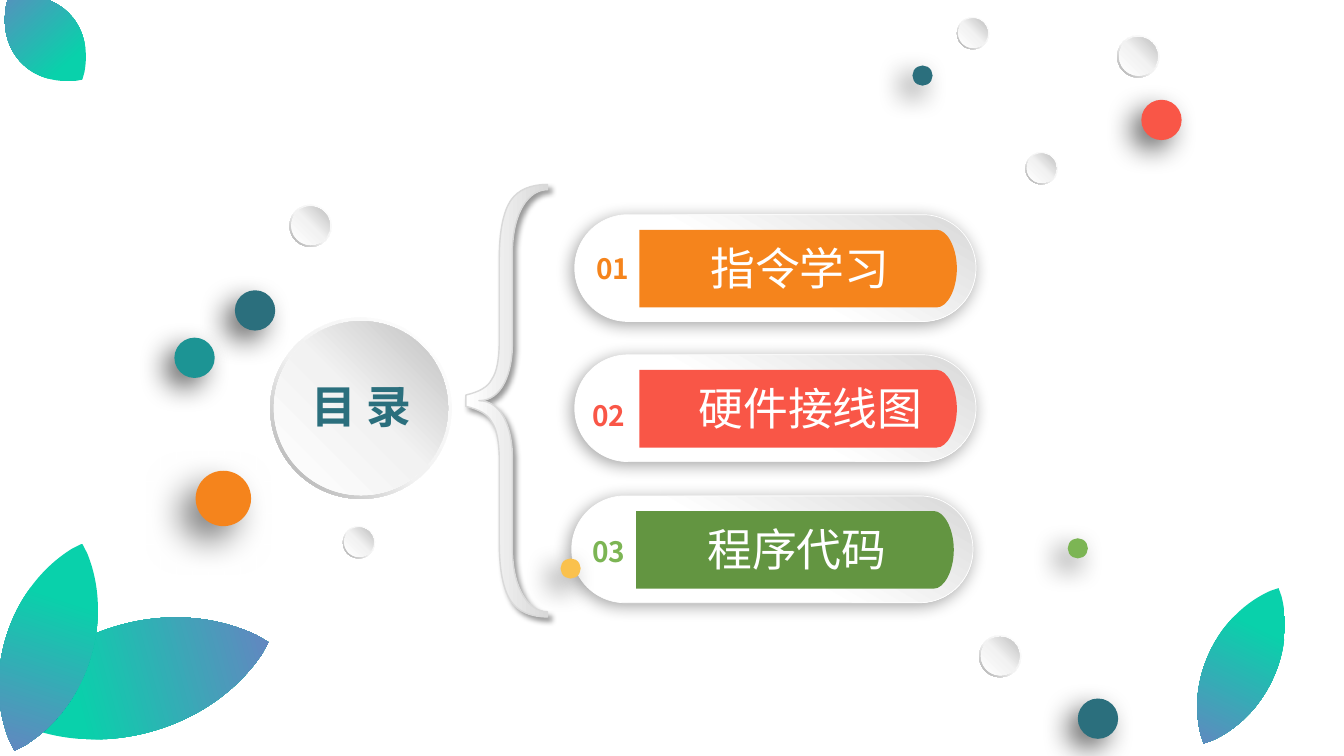
from lxml import etree
from pptx import Presentation
from pptx.dml.color import RGBColor
from pptx.enum.shapes import MSO_SHAPE
from pptx.enum.text import MSO_ANCHOR, PP_ALIGN
from pptx.oxml.ns import qn
from pptx.util import Inches, Pt

ELLIPSE, DONUT = MSO_SHAPE.OVAL, MSO_SHAPE.DONUT
PILL = MSO_SHAPE.ROUNDED_RECTANGLE
CENTER, TOP = PP_ALIGN.CENTER, MSO_ANCHOR.TOP
FONT = "Noto Sans CJK SC"

WHITE = RGBColor(0xFF, 0xFF, 0xFF)
PALE = RGBColor(0xF2, 0xF2, 0xF2)
LIGHT = RGBColor(0xD9, 0xD9, 0xD9)
SILVER = RGBColor(0xBF, 0xBF, 0xBF)
GREY = RGBColor(0xA6, 0xA6, 0xA6)
NAVY = RGBColor(0x2B, 0x6F, 0x7D)
TEAL = RGBColor(0x1C, 0x94, 0x94)
ORANGE = RGBColor(0xF5, 0x84, 0x1C)
RED = RGBColor(0xF9, 0x56, 0x47)
GREEN = RGBColor(0x63, 0x95, 0x41)
LIME = RGBColor(0x7C, 0xB5, 0x54)
YELLOW = RGBColor(0xFA, 0xC1, 0x4D)
MINT = RGBColor(0x09, 0xD1, 0xAB)
VIOLET = RGBColor(0x6E, 0x7D, 0xC3)

RING_FILL = ([(0, WHITE), (55, PALE), (100, GREY)], 135)
DISC_FILL = ([(0, WHITE), (51, PALE), (100, SILVER)], 315)
PILL_FILL = ([(45, WHITE), (100, LIGHT)], 300)
BRACE_FILL = ([(0, WHITE), (100, LIGHT)], 0)
LEAF_FILL = ([(0, MINT), (31, MINT), (100, VIOLET)], 90)


def add_color(parent, color, alpha=100):
    clr = etree.SubElement(parent, qn("a:srgbClr"), val=str(color))
    if alpha < 100:
        etree.SubElement(clr, qn("a:alpha"), val=str(alpha * 1000))


def style(sp, fill, line=None, shadow=None):
    """fill: colour or (stops, angle); line: (colour, pt); shadow: (alpha, blur, dist, angle)."""
    sp.shadow.inherit = False
    if isinstance(fill, RGBColor):
        sp.fill.solid()
        sp.fill.fore_color.rgb = fill
    else:
        stops, angle = fill
        sp.fill.gradient()
        grad = sp._element.spPr.find(qn("a:gradFill"))
        for child in list(grad):
            grad.remove(child)
        grad.set("rotWithShape", "1")
        gs_list = etree.SubElement(grad, qn("a:gsLst"))
        for pos, color in stops:
            add_color(etree.SubElement(gs_list, qn("a:gs"), pos=str(pos * 1000)), color)
        etree.SubElement(grad, qn("a:lin"), ang=str(angle * 60000), scaled="0")
    if line:
        sp.line.color.rgb, sp.line.width = line[0], Pt(line[1])
    else:
        sp.line.fill.background()
    if shadow:
        alpha, blur, dist, angle = shadow
        effects = sp._element.spPr.find(qn("a:effectLst"))
        outer = etree.SubElement(effects, qn("a:outerShdw"), blurRad=str(Pt(blur)),
                                 dist=str(Pt(dist)), dir=str(angle * 60000),
                                 algn="ctr", rotWithShape="0")
        add_color(outer, RGBColor(0, 0, 0), alpha)


def add_preset(parent, kind, x, y, w, h, fill, adj=None, line=None, shadow=None):
    sp = parent.shapes.add_shape(kind, Inches(x), Inches(y), Inches(w), Inches(h))
    if adj is not None:
        sp.adjustments[0] = adj
    style(sp, fill, line, shadow)


def mirrored(start, steps, flip):
    """Steps that lead back from the end to the flipped start."""
    pts = [flip(pt) for pt in [start] + sum(steps, [])][-2::-1]
    back = []
    for step in reversed(steps):
        back.append(pts[:len(step)])
        pts = pts[len(step):]
    return back


def add_outline(parent, x, y, w, h, start, steps, fill, line=None, shadow=None):
    """Steps hold shares of the box: one point is a line, three are a cubic curve."""
    pts = [(Inches(x + px * w), Inches(y + py * h)) for px, py in [start] + sum(steps, [])]
    builder = parent.shapes.build_freeform(*pts[0])
    builder.add_line_segments(pts[1:], close=True)
    sp = builder.convert_to_shape()
    segments = iter(list(sp._element.iter(qn("a:lnTo"))))
    for step in steps:
        parts = [next(segments) for _ in step]
        if len(parts) == 3:
            curve = etree.Element(qn("a:cubicBezTo"))
            parts[0].addprevious(curve)
            for part in parts:
                curve.append(part[0])
                part.getparent().remove(part)
    style(sp, fill, line, shadow)
    return sp


def add_text(parent, x, y, w, h, text, size, color, bold=False, wrap=True, inset=True):
    box = parent.shapes.add_textbox(Inches(x), Inches(y), Inches(w), Inches(h))
    tf = box.text_frame
    tf.word_wrap, tf.vertical_anchor = wrap, TOP
    if not inset:
        tf.margin_left = tf.margin_right = tf.margin_top = tf.margin_bottom = 0
    p = tf.paragraphs[0]
    p.alignment = CENTER
    r = p.add_run()
    r.text = text
    r.font.size, r.font.bold, r.font.name = Pt(size), bold, FONT
    r.font.color.rgb = color
    etree.SubElement(r.font._element, qn("a:ea"), typeface=FONT)


def knob(slide, x, y, d, inset=0.045):
    group = slide.shapes.add_group_shape()
    add_preset(group, DONUT, x, y, d, d, RING_FILL, 0.049)
    gap, disc = d * inset, d * (1 - 2 * inset)
    add_preset(group, ELLIPSE, x + gap, y + gap, disc, disc, DISC_FILL)
    return group


def title_knob(slide, x, y, d):
    group = knob(slide, x, y, d, 0.02)
    add_text(group, x + 0.12, y + 0.61, d - 0.23, 0.54, "目 录", 32, NAVY, True, inset=False)


def brace(slide, x, y, w, h):
    # Upper half: outer edge up, then inner edge back down to the middle
    start = (0, 0.487)
    half = [[(0.16, 0.48), (0.27, 0.469), (0.32, 0.45)],
            [(0.38, 0.434), (0.41, 0.403), (0.41, 0.361)],
            [(0.41, 0.172)],
            [(0.41, 0.107), (0.46, 0.063), (0.55, 0.037)],
            [(0.64, 0.012), (0.8, 0), (1, 0)],
            [(1, 0.012)],
            [(0.78, 0.012), (0.58, 0.06), (0.57, 0.154)],
            [(0.57, 0.371)],
            [(0.57, 0.429), (0.46, 0.5), (0.16, 0.5)]]
    lower = mirrored(start, half, lambda pt: (pt[0], 1 - pt[1]))
    add_outline(slide, x, y, w, h, start, half + lower, BRACE_FILL, (LIGHT, 1), (40, 4, 3, 45))


def entry(slide, x, y, number, title, color, number_color, number_at, title_x, title_w):
    group = slide.shapes.add_group_shape()
    add_preset(group, PILL, x, y, 3.98, 1.06, PILL_FILL, 0.5, (WHITE, 0.5), (34, 12, 3, 135))
    label = [[(0.937, 0)],
             [(0.97, 0), (1, 0.23), (1, 0.5)],
             [(1, 0.77), (0.97, 1), (0.937, 1)],
             [(0, 1)]]
    add_outline(group, x + 0.64, y + 0.15, 3.15, 0.77, (0, 0), label, color)
    dx, dy = number_at
    add_text(group, x + dx, y + dy, 0.54, 0.44, number, 20, number_color, True, wrap=False)
    add_text(group, x + title_x, y + 0.21, title_w, 0.64, title, 32, WHITE)


def leaf(parent, x, y, w, h, rotation):
    tip = (0.5, 0)
    side = [[(0.41, 0.035)],
            [(0.155, 0.155), (0, 0.317), (0, 0.5)],
            [(0, 0.683), (0.155, 0.845), (0.41, 0.965)],
            [(0.5, 1)]]
    other = mirrored(tip, side, lambda pt: (1 - pt[0], pt[1]))
    add_outline(parent, x, y, w, h, tip, side + other, LEAF_FILL).rotation = rotation


def dot(slide, x, y, d, color, shadow=(60, 20, 10, 135)):
    add_preset(slide, ELLIPSE, x, y, d, d, color, shadow=shadow)


def contents_slide(prs):
    slide = prs.slides.add_slide(prs.slide_layouts[6])
    # Title and brace
    title_knob(slide, 2.68, 3.15, 1.8)
    brace(slide, 4.62, 1.83, 0.81, 4.29)
    # Entries
    entry(slide, 5.7, 2.13, "01", "指令学习", ORANGE, ORANGE, (0.11, 0.32), 1.13, 2.21)
    entry(slide, 5.7, 3.52, "02", "硬件接线图", RED, RED, (0.07, 0.38), 1.11, 2.46)
    entry(slide, 5.67, 4.92, "03", "程序代码", GREEN, LIME, (0.1, 0.33), 1.13, 2.21)
    # Leaves: a pair, then two single ones
    pair = slide.shapes.add_group_shape()
    leaf(pair, 0.79, 5.36, 1.1, 2.74, 254.8)
    leaf(pair, 0.05, 5.34, 0.86, 2.16, 18.1)
    leaf(slide, 11.97, 5.75, 0.68, 1.71, 25.7)
    leaf(slide, 0.11, -0.17, 0.68, 1.1, 138.3)
    # Coloured dots and grey knobs
    dot(slide, 11.32, 0.99, 0.4, RED)
    knob(slide, 9.49, 0.17, 0.32)
    dot(slide, 9.05, 0.65, 0.2, NAVY)
    knob(slide, 11.08, 0.35, 0.42)
    dot(slide, 2.33, 2.88, 0.4, NAVY)
    knob(slide, 3.4, 5.22, 0.32)
    dot(slide, 5.56, 5.54, 0.2, YELLOW)
    dot(slide, 1.94, 4.67, 0.55, ORANGE, (50, 25, 15, 135))
    dot(slide, 10.69, 6.93, 0.4, NAVY)
    dot(slide, 1.73, 3.35, 0.4, TEAL)
    knob(slide, 10.17, 1.51, 0.32)
    knob(slide, 9.71, 6.3, 0.42)
    dot(slide, 10.59, 5.34, 0.2, LIME)
    knob(slide, 2.87, 2.03, 0.42)


def main():
    prs = Presentation()
    prs.slide_width, prs.slide_height = Inches(13.33), Inches(7.5)
    contents_slide(prs)
    prs.save("out.pptx")


if __name__ == "__main__":
    main()
